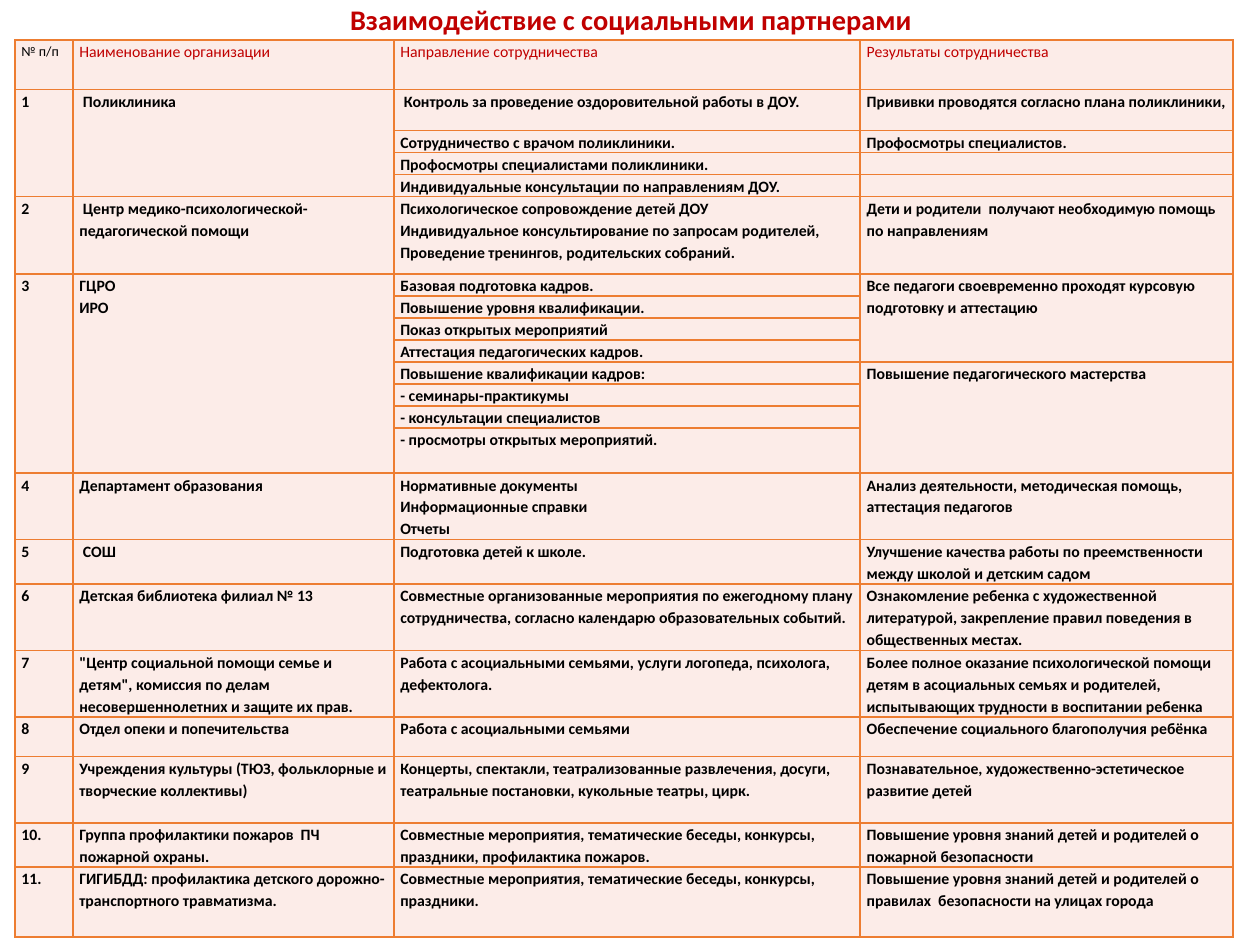
from lxml.etree import SubElement
from pptx import Presentation
from pptx.dml.color import RGBColor
from pptx.enum.text import MSO_ANCHOR as Anchor, MSO_AUTO_SIZE as AutoSize, PP_ALIGN as Align
from pptx.oxml.ns import qn
from pptx.util import Cm, Pt

# Content
TITLE = "Взаимодействие с социальными партнерами"
HEADINGS = ["№ п/п", "Наименование организации",
            "Направление сотрудничества", "Результаты сотрудничества"]

# Number, organisation, directions as (text, row height), results as (text, rows covered)
PARTNERS = [
    ("1", " Поликлиника",
     [(" Контроль за проведение оздоровительной работы в ДОУ.", 0.83),
      ("Сотрудничество с врачом поликлиники.", 0.44),
      ("Профосмотры специалистами поликлиники.", 0.44),
      ("Индивидуальные консультации по направлениям ДОУ.", 0.44)],
     [("Прививки проводятся согласно плана поликлиники,", 1),
      ("Профосмотры специалистов.", 1), ("", 1), ("", 1)]),
    ("2", " Центр медико-психологической-педагогической помощи",
     [("Психологическое сопровождение детей ДОУ\n"
       "Индивидуальное консультирование по запросам родителей,\n"
       "Проведение тренингов, родительских собраний.", 1.56)],
     [("Дети и родители  получают необходимую помощь по направлениям", 1)]),
    ("3", "ГЦРО\nИРО",
     [("Базовая подготовка кадров.", 0.44),
      ("Повышение уровня квалификации.", 0.44),
      ("Показ открытых мероприятий", 0.44),
      ("Аттестация педагогических кадров.", 0.44),
      ("Повышение квалификации кадров:", 0.44),
      ("- семинары-практикумы", 0.44),
      ("- консультации специалистов", 0.44),
      ("- просмотры открытых мероприятий.", 0.91)],
     [("Все педагоги своевременно проходят курсовую подготовку и аттестацию", 4),
      ("Повышение педагогического мастерства", 4)]),
    ("4", "Департамент образования",
     [("Нормативные документы\nИнформационные справки\nОтчеты", 1.34)],
     [("Анализ деятельности, методическая помощь, аттестация педагогов", 1)]),
    ("5", " СОШ",
     [("Подготовка детей к школе.", 0.89)],
     [("Улучшение качества работы по преемственности между школой и детским садом", 1)]),
    ("6", "Детская библиотека филиал № 13",
     [("Совместные организованные мероприятия по ежегодному плану сотрудничества, "
       "согласно календарю образовательных событий.", 1.34)],
     [("Ознакомление ребенка с художественной литературой, закрепление правил "
       "поведения в общественных местах.", 1)]),
    ("7", '"Центр социальной помощи семье и детям", комиссия по делам '
          'несовершеннолетних и защите их прав.',
     [("Работа с асоциальными семьями, услуги логопеда, психолога, дефектолога.", 1.34)],
     [("Более полное оказание психологической помощи детям в асоциальных семьях и "
       "родителей, испытывающих трудности в воспитании ребенка", 1)]),
    ("8", "Отдел опеки и попечительства",
     [("Работа с асоциальными семьями", 0.8)],
     [("Обеспечение социального благополучия ребёнка", 1)]),
    ("9", "Учреждения культуры (ТЮЗ, фольклорные и творческие коллективы)",
     [("Концерты, спектакли, театрализованные развлечения, досуги, "
       "театральные постановки, кукольные театры, цирк.", 1.34)],
     [("Познавательное, художественно-эстетическое развитие детей", 1)]),
    ("10.", "Группа профилактики пожаров  ПЧ пожарной охраны.",
     [("Совместные мероприятия, тематические беседы, конкурсы, праздники, "
       "профилактика пожаров.", 0.89)],
     [("Повышение уровня знаний детей и родителей о пожарной безопасности", 1)]),
    ("11.", "ГИГИБДД: профилактика детского дорожно-транспортного травматизма.",
     [("Совместные мероприятия, тематические беседы, конкурсы, праздники.", 1.41)],
     [("Повышение уровня знаний детей и родителей о правилах  безопасности "
       "на улицах города", 1)]),
]

COLORS = {"accent": "C00000", "text": "000000", "fill": "FCECE8", "border": "ED7D31"}
FONT = "Calibri"
COLUMN_WIDTHS = [1.17, 6.47, 9.4, 7.52]
HEADING_HEIGHT = 0.99
BODY_SIZE = 9


def add_span(para, text, size, color, bold):
    span = para.add_run()
    span.text = text
    span.font.name = FONT
    span.font.size = Pt(size)
    span.font.bold = bold
    span.font.color.rgb = RGBColor.from_string(COLORS[color])


def write_cell(cell, text, size=BODY_SIZE, color="text", bold=True):
    for index, line in enumerate(text.split("\n")):
        frame = cell.text_frame
        para = frame.add_paragraph() if index else frame.paragraphs[0]
        para.line_spacing = 1.15
        if line:
            add_span(para, line, size, color, bold)


def style_cell(cell):
    cell.margin_left = cell.margin_right = Cm(0.13)
    cell.margin_top = cell.margin_bottom = 0
    cell.vertical_anchor = Anchor.TOP
    properties = cell._tc.get_or_add_tcPr()
    for side in ("a:lnL", "a:lnR", "a:lnT", "a:lnB"):
        line = SubElement(properties, qn(side), w=str(Pt(1)))
        SubElement(SubElement(line, qn("a:solidFill")), qn("a:srgbClr"), val=COLORS["border"])
    cell.fill.solid()
    cell.fill.fore_color.rgb = RGBColor.from_string(COLORS["fill"])
    # Empty cells keep the body size, so that low rows stay low
    if not cell.text_frame.text:
        SubElement(cell.text_frame.paragraphs[0]._p, qn("a:endParaRPr"), sz=str(BODY_SIZE * 100))


def fill_block(table, column, top, text, row_count):
    cell = table.cell(top, column)
    if row_count > 1:
        cell.merge(table.cell(top + row_count - 1, column))
    write_cell(cell, text)


def add_title(page):
    title = page.shapes.title
    title.left, title.top, title.width, title.height = Cm(1.83), Cm(0), Cm(21.77), Cm(0.86)
    frame = title.text_frame
    frame.auto_size = AutoSize.NONE
    frame.vertical_anchor = Anchor.MIDDLE
    para = frame.paragraphs[0]
    para.alignment = Align.CENTER
    para.line_spacing = 0.9
    add_span(para, TITLE, 16.2, "accent", True)


def add_partner_table(page):
    heights = [HEADING_HEIGHT] + [height for partner in PARTNERS for _, height in partner[2]]
    table = page.shapes.add_table(len(heights), len(COLUMN_WIDTHS), Cm(0.3), Cm(0.81),
                                  Cm(sum(COLUMN_WIDTHS)), Cm(sum(heights))).table
    table.first_row = table.horz_banding = False
    for column, width in zip(table.columns, COLUMN_WIDTHS):
        column.width = Cm(width)
    for row, height in zip(table.rows, heights):
        row.height = Cm(height)

    # Heading row
    for column, heading in enumerate(HEADINGS):
        size, color = (BODY_SIZE, "accent") if column else (8, "text")
        write_cell(table.cell(0, column), heading, size, color, False)

    # One block of rows for each partner
    top = 1
    for number, organisation, directions, results in PARTNERS:
        fill_block(table, 0, top, number, len(directions))
        fill_block(table, 1, top, organisation, len(directions))
        for offset, (direction, _) in enumerate(directions):
            fill_block(table, 2, top + offset, direction, 1)
        result_top = top
        for result, row_count in results:
            fill_block(table, 3, result_top, result, row_count)
            result_top += row_count
        top += len(directions)

    for cell in table.iter_cells():
        style_cell(cell)


def main():
    deck = Presentation()
    deck.slide_width, deck.slide_height = Cm(25.4), Cm(19.05)
    page = deck.slides.add_slide(deck.slide_layouts[5])
    add_title(page)
    add_partner_table(page)
    deck.save("out.pptx")


if __name__ == "__main__":
    main()
